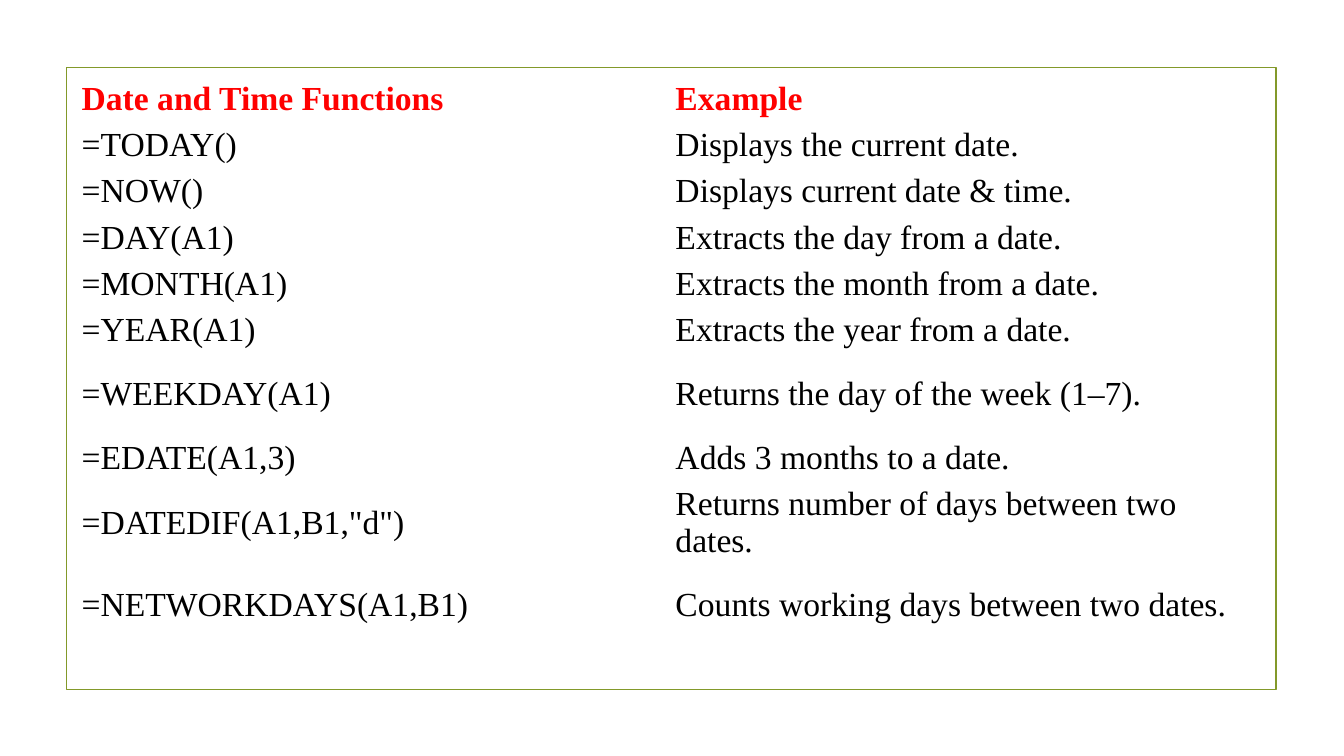
from pptx import Presentation
from pptx.dml.color import RGBColor
from pptx.enum.shapes import MSO_SHAPE
from pptx.enum.text import MSO_ANCHOR
from pptx.util import Pt

PX = 9144


def px(*sizes):
    return [size * PX for size in sizes]


def color(code):
    return RGBColor.from_string(code)


deck = Presentation()
deck.slide_width, deck.slide_height = px(1333, 750)
slide = deck.slides.add_slide(deck.slide_layouts[6])

frame = slide.shapes.add_shape(MSO_SHAPE.RECTANGLE, *px(66, 67, 1200, 617))
frame.shadow.inherit = False
frame.fill.background()
frame.line.color.rgb = color("83992A")
frame.line.width = Pt(1.25)

low, tall = 46, 81
rows = [
    (low, "Date and Time Functions", "Example"),
    (low, "=TODAY()", "Displays the current date."),
    (low, "=NOW()", "Displays current date & time."),
    (low, "=DAY(A1)", "Extracts the day from a date."),
    (low, "=MONTH(A1)", "Extracts the month from a date."),
    (low, "=YEAR(A1)", "Extracts the year from a date."),
    (tall, "=WEEKDAY(A1)", "Returns the day of the week (1–7)."),
    (low, "=EDATE(A1,3)", "Adds 3 months to a date."),
    (tall, '=DATEDIF(A1,B1,"d")', "Returns number of days between two dates."),
    (tall, "=NETWORKDAYS(A1,B1)", "Counts working days between two dates."),
]

side, edge = px(7, 4)
box = {
    "margin_left": side,
    "margin_right": side,
    "margin_top": edge,
    "margin_bottom": edge,
    "vertical_anchor": MSO_ANCHOR.MIDDLE,
}
face = {"name": "Times New Roman", "size": Pt(24)}

total = sum(row[0] for row in rows)
table = slide.shapes.add_table(len(rows), 2, *px(74, 75, 1178, total)).table
table.first_row = False
table.horz_banding = False
for column in table.columns:
    column.width = 589 * PX

for r, (height, *texts) in enumerate(rows):
    table.rows[r].height = height * PX
    for c, text in enumerate(texts):
        cell = table.cell(r, c)
        cell.fill.background()
        for key, value in box.items():
            setattr(cell, key, value)
        run = cell.text_frame.paragraphs[0].add_run()
        run.text = text
        for key, value in face.items():
            setattr(run.font, key, value)
        run.font.bold = r == 0
        run.font.color.rgb = color("FF0000" if r == 0 else "000000")

deck.save("out.pptx")
